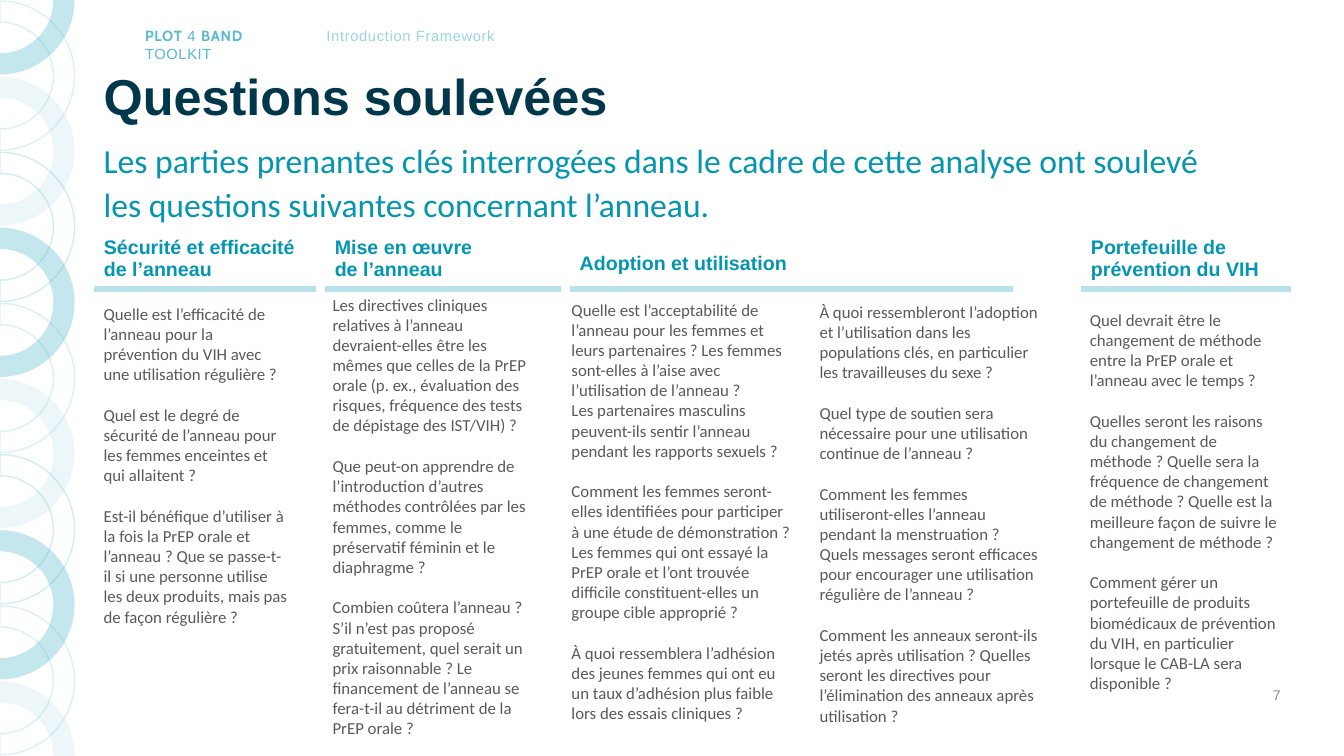
from math import cos, radians, sin

from lxml.etree import SubElement
from pptx import Presentation
from pptx.dml.color import RGBColor
from pptx.enum.text import MSO_ANCHOR, PP_ALIGN
from pptx.oxml.ns import qn
from pptx.util import Inches, Pt

NAVY = RGBColor(0x00, 0x37, 0x4B)
TEAL = RGBColor(0x04, 0x95, 0xB0)
RING_BLUE = RGBColor(0x56, 0xB9, 0xCC)
PALE_BLUE = RGBColor(0x9A, 0xD5, 0xE0)
RULE_BLUE = RGBColor(0xB9, 0xE2, 0xEB)
TEXT_GREY = RGBColor(0x59, 0x59, 0x59)
NUMBER_GREY = RGBColor(0x8C, 0x8C, 0x8C)
WHITE = RGBColor(0xFF, 0xFF, 0xFF)

RING_STEP, RING_OUTER, RING_INNER = 0.75, 0.74, 0.53
# Filled or outlined, and opacity in percent; repeated down the edge
RING_STYLES = [(True, 35), (False, 20), (True, 10), (False, 25)]

# Heading, left, top, width, height
HEADINGS = [
    ("Sécurité et efficacité\nde l’anneau", 0.93, 2.3, 2.21, 0.57),
    ("Mise en œuvre\nde l’anneau", 3.22, 2.3, 2.35, 0.57),
    ("Adoption et utilisation", 5.65, 2.46, 4.4, 0.41),
    ("Portefeuille de prévention du VIH", 10.72, 2.3, 2.09, 0.57),
]

# Left, top, width, height, questions
COLUMNS = [
    (0.93, 2.96, 2.03, 3.33, [
        "Quelle est l’efficacité de l’anneau pour la prévention du VIH avec une "
        "utilisation régulière ?",
        "Quel est le degré de sécurité de l’anneau pour les femmes enceintes et "
        "qui allaitent ?",
        "Est-il bénéfique d’utiliser à la fois la PrEP orale et l’anneau ? Que se "
        "passe-t-il si une personne utilise les deux produits, mais pas de façon "
        "régulière ?",
    ]),
    (3.2, 2.87, 2.21, 4.54, [
        "Les directives cliniques relatives à l’anneau devraient-elles être les "
        "mêmes que celles de la PrEP orale (p. ex., évaluation des risques, "
        "fréquence des tests de dépistage des IST/VIH) ?",
        "Que peut-on apprendre de l’introduction d’autres méthodes contrôlées par "
        "les femmes, comme le préservatif féminin et le diaphragme ?",
        "Combien coûtera l’anneau ? S’il n’est pas proposé gratuitement, quel "
        "serait un prix raisonnable ? Le financement de l’anneau se fera-t-il au "
        "détriment de la PrEP orale ?",
    ]),
    (5.57, 2.92, 2.4, 4.34, [
        "Quelle est l’acceptabilité de l’anneau pour les femmes et leurs "
        "partenaires ? Les femmes sont-elles à l’aise avec l’utilisation de "
        "l’anneau ?\nLes partenaires masculins peuvent-ils sentir l’anneau "
        "pendant les rapports sexuels ?",
        "Comment les femmes seront-elles identifiées pour participer à une étude "
        "de démonstration ? Les femmes qui ont essayé la PrEP orale et l’ont "
        "trouvée difficile constituent-elles un groupe cible approprié ?",
        "À quoi ressemblera l’adhésion des jeunes femmes qui ont eu un taux "
        "d’adhésion plus faible lors des essais cliniques ?",
    ]),
    (8.03, 2.94, 2.4, 4.34, [
        "À quoi ressembleront l’adoption et l’utilisation dans les populations "
        "clés, en particulier les travailleuses du sexe ?",
        "Quel type de soutien sera nécessaire pour une utilisation continue de "
        "l’anneau ?",
        "Comment les femmes utiliseront-elles l’anneau pendant la menstruation ? "
        "Quels messages seront efficaces pour encourager une utilisation "
        "régulière de l’anneau ?",
        "Comment les anneaux seront-ils jetés après utilisation ? Quelles seront "
        "les directives pour l’élimination des anneaux après utilisation ?",
    ]),
    (10.71, 3.02, 2.09, 3.94, [
        "Quel devrait être le changement de méthode entre la PrEP orale et "
        "l’anneau avec le temps ?",
        "Quelles seront les raisons du changement de méthode ? Quelle sera la "
        "fréquence de changement de méthode ? Quelle est la meilleure façon de "
        "suivre le changement de méthode ?",
        "Comment gérer un portefeuille de produits biomédicaux de prévention du "
        "VIH, en particulier lorsque le CAB-LA sera disponible ?",
    ]),
]


def style_span(span, name, size, color, bold=False):
    span.font.name = name
    span.font.size = Pt(size)
    span.font.bold = bold
    span.font.color.rgb = color


def add_text(page, left, top, width, height, texts, name, size, color,
             bold=False, gap=0):
    box = page.shapes.add_textbox(Inches(left), Inches(top), Inches(width), Inches(height))
    frame = box.text_frame
    frame.word_wrap = True
    for index, text in enumerate(texts):
        para = frame.add_paragraph() if index else frame.paragraphs[0]
        para.text = text
        para.space_before = Pt(gap if index else 0)
        for span in para.runs:
            style_span(span, name, size, color, bold)
    return frame


def add_running_head(page, left, width, parts, color):
    """Letter-spaced line made of (text, font, bold) parts."""
    frame = add_text(page, left, 0.22, width, 0.28, [""], "Arial", 10.5, color)
    frame.word_wrap = False
    for text, name, bold in parts:
        span = frame.paragraphs[0].add_run()
        span.text = text
        style_span(span, name, 10.5, color, bold)
        span.font._element.set("spc", "50")


def set_opacity(color_format, percent):
    color = color_format._xPr.find(".//" + qn("a:srgbClr"))
    SubElement(color, qn("a:alpha"), val=str(percent * 1000))


def add_ring(page, center, first, last, filled, opacity):
    """Right-hand part of a ring centred on the slide's left edge."""
    angles = range(first, last + 1, 90)
    corners = [(RING_OUTER, angle) for angle in angles]
    corners += [(RING_INNER, angle) for angle in reversed(angles)]
    points = [(Inches(radius * cos(radians(angle))),
               Inches(center + radius * sin(radians(angle)))) for radius, angle in corners]
    builder = page.shapes.build_freeform(*points[0])
    builder.add_line_segments(points[1:], close=True)
    ring = builder.convert_to_shape()
    # Round each segment that stays on one radius
    segments = list(ring._element.iter(qn("a:lnTo")))
    for segment, (radius, start), (next_radius, end) in zip(segments, corners, corners[1:]):
        if radius == next_radius:
            size = str(Inches(radius))
            arc = SubElement(segment.getparent(), qn("a:arcTo"), wR=size, hR=size,
                             stAng=str(start % 360 * 60000), swAng=str((end - start) * 60000))
            segment.getparent().replace(segment, arc)
    ring.shadow.inherit = False
    if filled:
        ring.fill.solid()
        ring.fill.fore_color.rgb = RING_BLUE
        set_opacity(ring.fill, opacity)
        ring.line.fill.background()
    else:
        ring.fill.background()
        ring.line.color.rgb = RING_BLUE
        ring.line.width = Pt(1)
        set_opacity(ring.line.fill, opacity)


def add_heading(page, text, left, top, width, height):
    """One-cell table with a thick rule below."""
    table = page.shapes.add_table(1, 1, Inches(left), Inches(top),
                                  Inches(width), Inches(height)).table
    table.first_row = table.horz_banding = False
    cell = table.cell(0, 0)
    para = cell.text_frame.paragraphs[0]
    para.text = text
    for span in para.runs:
        style_span(span, "Arial", 14, TEAL, True)
    for side, color, points in (("L", WHITE, 1), ("R", WHITE, 1),
                                ("T", WHITE, 1), ("B", RULE_BLUE, 4.5)):
        border = SubElement(cell._tc.get_or_add_tcPr(), qn("a:ln" + side), w=str(Pt(points)))
        SubElement(SubElement(border, qn("a:solidFill")), qn("a:srgbClr"), val=str(color))
    cell.fill.solid()
    cell.fill.fore_color.rgb = WHITE


def main():
    deck = Presentation()
    deck.slide_width, deck.slide_height = Inches(13.33), Inches(7.5)
    page = deck.slides.add_slide(deck.slide_layouts[6])

    # Running head
    add_running_head(page, 1.34, 1.84, [
        ("PLOT", "Cabin", True), (" 4 ", "Arial", False),
        ("BAND ", "Cabin", True), ("TOOLKIT", "Arial", False)], RING_BLUE)
    add_running_head(page, 3.14, 4.17, [("Introduction Framework", "Arial", False)], PALE_BLUE)

    # Ring chain, with quarter rings at the top and bottom
    for index in range(11):
        first = 0 if index == 0 else -90
        last = 0 if index == 10 else 90
        add_ring(page, index * RING_STEP, first, last, *RING_STYLES[index % 4])

    # Title, lead sentence and page number
    title = add_text(page, 0.93, 0.7, 11.07, 0.56, ["Questions soulevées"],
                     "Arial", 36, NAVY, True)
    title.vertical_anchor = MSO_ANCHOR.MIDDLE
    title.paragraphs[0].line_spacing = 0.9
    lead = add_text(page, 0.93, 1.3, 11.1, 0.52, [
        "Les parties prenantes clés interrogées dans le cadre de cette analyse ont "
        "soulevé les questions suivantes concernant l’anneau."], "Calibri", 24, TEAL)
    lead.paragraphs[0].line_spacing = 1.1
    number = add_text(page, 9.8, 6.69, 3, 0.4, ["7"], "Arial", 10, NUMBER_GREY)
    number.vertical_anchor = MSO_ANCHOR.MIDDLE
    number.paragraphs[0].alignment = PP_ALIGN.RIGHT

    # Questions under their headings
    for heading in HEADINGS:
        add_heading(page, *heading)
    for left, top, width, height, questions in COLUMNS:
        add_text(page, left, top, width, height, questions, "Calibri", 12, TEXT_GREY, gap=14.6)

    deck.save("out.pptx")


if __name__ == "__main__":
    main()
